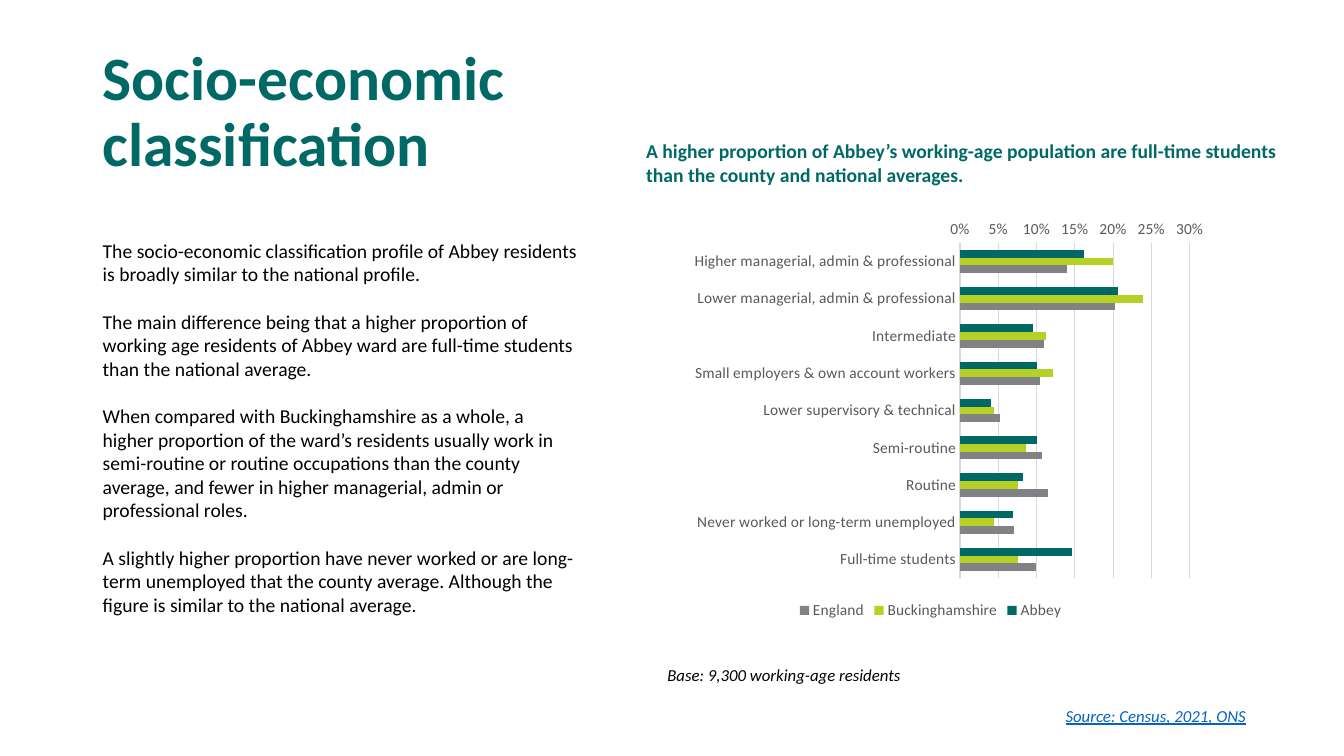
from pptx import Presentation
from pptx.chart.data import CategoryChartData
from pptx.dml.color import RGBColor
from pptx.enum.chart import XL_CHART_TYPE, XL_LEGEND_POSITION, XL_TICK_MARK
from pptx.enum.text import MSO_ANCHOR
from pptx.oxml import parse_xml
from pptx.oxml.ns import nsdecls
from pptx.util import Inches, Pt

BARS = XL_CHART_TYPE.BAR_CLUSTERED
BOTTOM = XL_LEGEND_POSITION.BOTTOM
NO_TICK = XL_TICK_MARK.NONE
TOP, MIDDLE = MSO_ANCHOR.TOP, MSO_ANCHOR.MIDDLE

TEAL = RGBColor(0x00, 0x69, 0x65)
LIME = RGBColor(0xB5, 0xD1, 0x23)
GREY = RGBColor(0x80, 0x82, 0x85)
BLACK = RGBColor(0x00, 0x00, 0x00)
BLUE = RGBColor(0x05, 0x63, 0xC1)
LABEL = RGBColor(0x59, 0x59, 0x59)
RULE = RGBColor(0xD9, 0xD9, 0xD9)

BODY = [
    "The socio-economic classification profile of Abbey residents is broadly "
    "similar to the national profile.",
    "The main difference being that a higher proportion of working age "
    "residents of Abbey ward are full-time students than the national average.",
    "When compared with Buckinghamshire as a whole, a higher proportion of the "
    "ward’s residents usually work in semi-routine or routine occupations than "
    "the county average, and fewer in higher managerial, admin or professional "
    "roles.",
    "A slightly higher proportion have never worked or are long-term "
    "unemployed that the county average. Although the figure is similar to the "
    "national average.",
]
CLASSES = [
    "Higher managerial, admin & professional",
    "Lower managerial, admin & professional",
    "Intermediate",
    "Small employers & own account workers",
    "Lower supervisory & technical",
    "Semi-routine",
    "Routine",
    "Never worked or long-term unemployed",
    "Full-time students",
]
SHARES = [
    ("Abbey", TEAL,
     [0.162, 0.207, 0.095, 0.1, 0.04, 0.1, 0.082, 0.069, 0.146]),
    ("Buckinghamshire", LIME,
     [0.2, 0.239, 0.112, 0.122, 0.045, 0.086, 0.076, 0.045, 0.076]),
    ("England", GREY,
     [0.14, 0.203, 0.11, 0.104, 0.052, 0.107, 0.115, 0.07, 0.099]),
]


class Page:
    def __init__(self, slide, face="Calibri"):
        self.slide = slide
        self.face = face

    def style(self, font, size, color):
        font.name = self.face
        font.size = Pt(size)
        font.color.rgb = color

    def text(self, box, lines, size, color=BLACK, bold=False, italic=False,
             under=False, anchor=TOP, gap=0, lead=1.0):
        frame = self.slide.shapes.add_textbox(*map(Inches, box)).text_frame
        frame.word_wrap = True
        frame.vertical_anchor = anchor
        frame.text = "\n".join(lines)
        for para in frame.paragraphs:
            self.style(para.font, size, color)
            para.font.bold = bold
            para.font.italic = italic
            para.font.underline = under
            para.line_spacing = lead
            para.space_after = Pt(gap)

    def chart(self, box, names, series, plot):
        data = CategoryChartData(number_format="0.0%")
        data.categories = names
        for name, _, values in series:
            data.add_series(name, values)
        chart = self.slide.shapes.add_chart(
            BARS, *map(Inches, box), data).chart
        self.style(chart.font, 11, LABEL)
        chart.has_title = False
        chart.has_legend = True
        chart.legend.position = BOTTOM
        chart.legend.include_in_layout = False
        self.style(chart.legend.font, 11, LABEL)

        bars = chart.plots[0]
        bars.gap_width = 182
        bars.overlap = 0
        bars.vary_by_categories = False
        for item, (_, color, _) in zip(bars.series, series):
            item.format.fill.solid()
            item.format.fill.fore_color.rgb = color

        cats, vals = chart.category_axis, chart.value_axis
        for axis in (cats, vals):
            axis.major_tick_mark = axis.minor_tick_mark = NO_TICK
            self.style(axis.tick_labels.font, 11, LABEL)
        cats.reverse_order = True
        vals.minimum_scale, vals.maximum_scale = 0, 0.3
        vals.major_unit = 0.05
        vals.tick_labels.number_format = "0%"
        vals.tick_labels.number_format_is_linked = False
        vals.format.line.fill.background()
        vals.has_major_gridlines = True
        for line in (cats.format.line, vals.major_gridlines.format.line):
            line.color.rgb = RULE
            line.width = Pt(0.75)
        self.place(chart, plot)

    def place(self, chart, plot):
        """Fix the inner plot area as shares of the chart frame."""
        area = chart.element.xpath(".//c:plotArea")[0]
        for old in area.xpath("./c:layout"):
            area.remove(old)
        modes = '<c:xMode val="edge"/><c:yMode val="edge"/>'
        sizes = "".join(f'<c:{tag} val="{val}"/>'
                        for tag, val in zip("xywh", plot))
        area.insert(0, parse_xml(
            f'<c:layout {nsdecls("c")}><c:manualLayout>'
            f'<c:layoutTarget val="inner"/>{modes}{sizes}'
            '</c:manualLayout></c:layout>'))


def main():
    deck = Presentation()
    deck.slide_width, deck.slide_height = Inches(13.33), Inches(7.5)
    page = Page(deck.slides.add_slide(deck.slide_layouts[6]))
    page.text((0.92, 0.4, 5.08, 1.45), ["Socio-economic classification"], 44,
              TEAL, bold=True, anchor=MIDDLE, lead=0.9)
    page.text((6.52, 6.55, 5.84, 0.3), ["Base: 9,300 working-age residents"],
              12, italic=True)
    page.text((10.47, 6.95, 2.16, 0.3), ["Source: Census, 2021, ONS"], 12,
              BLUE, italic=True, under=True)
    page.chart((6.31, 2.08, 5.84, 4.11), CLASSES, SHARES,
               (0.55, 0.08, 0.39, 0.81))
    page.text((6.31, 1.33, 6.71, 0.57),
              ["A higher proportion of Abbey’s working-age population are "
               "full-time students than the county and national averages."],
              14, TEAL, bold=True)
    page.text((0.92, 2.32, 4.91, 3.87), BODY, 14, gap=17)
    deck.save("out.pptx")


if __name__ == "__main__":
    main()
